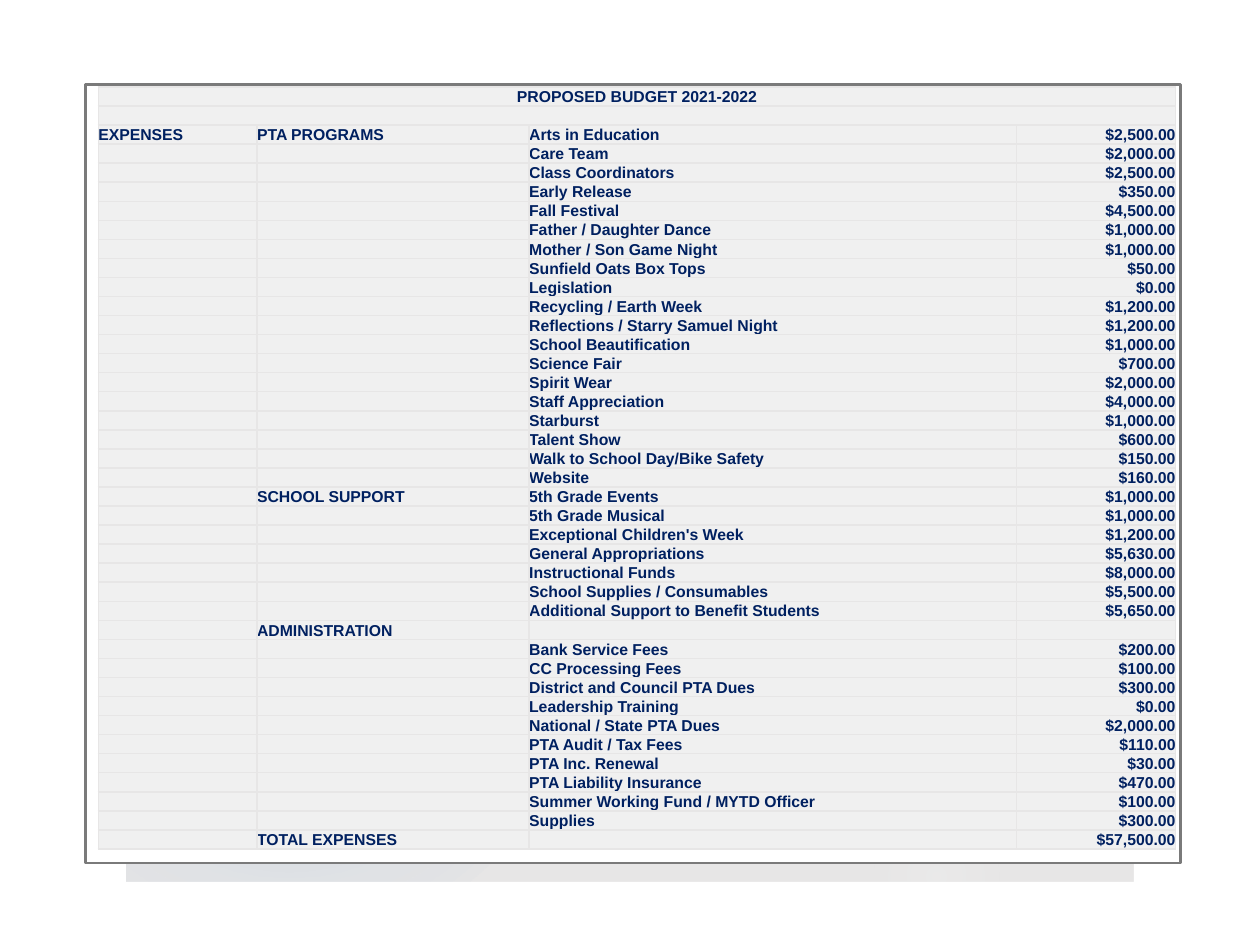
from pptx import Presentation
from pptx import oxml
from pptx import util as u
from pptx.dml.color import RGBColor
from pptx.enum import shapes, text
from pptx.oxml import ns

BACKGROUND = RGBColor(0xE7, 0xE6, 0xE6)
BORDER = BACKGROUND
CELL = RGBColor(0xF0, 0xF0, 0xF0)
NAVY = RGBColor(0x00, 0x20, 0x60)
BLUE = RGBColor(0x5B, 0x9B, 0xD5)
WHITE = RGBColor(0xFF, 0xFF, 0xFF)
GRAY = RGBColor(0x7A, 0x7A, 0x7A)

# left, top, diameter, colour, then (position, opacity) stops in percent
GLOWS = [
    (6.89, 1.83, 3.08, BLUE, [(0, 7), (36, 6), (69, 0)]),
    (0, 2.92, 4.58, BLUE, [(0, 11), (36, 10), (75, 0)]),
    (6.22, 0, 1.75, WHITE, [(0, 14), (36, 7), (73, 0)]),
    (6.89, 6.42, 1.08, WHITE, [(0, 14), (36, 7), (66, 0)]),
    (0, 3.17, 2.58, BLUE, [(0, 8), (36, 8), (72, 0)]),
]

COLUMN_WIDTHS = [1.26, 2.16, 3.87, 1.26]
TITLE = "PROPOSED BUDGET 2021-2022"
PROGRAMS = [
    ("Arts in Education", "$2,500.00"),
    ("Care Team", "$2,000.00"),
    ("Class Coordinators", "$2,500.00"),
    ("Early Release", "$350.00"),
    ("Fall Festival", "$4,500.00"),
    ("Father / Daughter Dance", "$1,000.00"),
    ("Mother / Son Game Night", "$1,000.00"),
    ("Sunfield Oats Box Tops", "$50.00"),
    ("Legislation", "$0.00"),
    ("Recycling / Earth Week", "$1,200.00"),
    ("Reflections / Starry Samuel Night", "$1,200.00"),
    ("School Beautification", "$1,000.00"),
    ("Science Fair", "$700.00"),
    ("Spirit Wear", "$2,000.00"),
    ("Staff Appreciation", "$4,000.00"),
    ("Starburst", "$1,000.00"),
    ("Talent Show", "$600.00"),
    ("Walk to School Day/Bike Safety", "$150.00"),
    ("Website", "$160.00"),
]
SUPPORT = [
    ("5th Grade Events", "$1,000.00"),
    ("5th Grade Musical", "$1,000.00"),
    ("Exceptional Children's Week", "$1,200.00"),
    ("General Appropriations", "$5,630.00"),
    ("Instructional Funds", "$8,000.00"),
    ("School Supplies / Consumables", "$5,500.00"),
    ("Additional Support to Benefit Students", "$5,650.00"),
]
ADMINISTRATION = [
    ("", ""),
    ("Bank Service Fees", "$200.00"),
    ("CC Processing Fees", "$100.00"),
    ("District and Council PTA Dues", "$300.00"),
    ("Leadership Training", "$0.00"),
    ("National / State PTA Dues", "$2,000.00"),
    ("PTA Audit / Tax Fees", "$110.00"),
    ("PTA Inc. Renewal", "$30.00"),
    ("PTA Liability Insurance", "$470.00"),
    ("Summer Working Fund / MYTD Officer", "$100.00"),
    ("Supplies", "$300.00"),
]
SECTIONS = [
    ("PTA PROGRAMS", PROGRAMS),
    ("SCHOOL SUPPORT", SUPPORT),
    ("ADMINISTRATION", ADMINISTRATION),
    ("TOTAL EXPENSES", [("", "$57,500.00")]),
]


def budget_rows():
    rows = [[TITLE, "", "", ""], [""] * 4]
    for section, items in SECTIONS:
        for index, (item, amount) in enumerate(items):
            rows.append(["", section if index == 0 else "", item, amount])
    rows[2][0] = "EXPENSES"
    return rows


def add_glow(slide, left, top, diameter, color, stops):
    """Add a circle whose colour fades out from its centre."""
    size = u.Inches(diameter)
    glow = slide.shapes.add_shape(
        shapes.MSO_SHAPE.OVAL, u.Inches(left), u.Inches(top), size, size)
    glow.shadow.inherit = False
    glow.line.fill.background()
    stop_xml = "".join(
        f'<a:gs pos="{position * 1000}"><a:srgbClr val="{color}">'
        f'<a:alpha val="{opacity * 1000}"/></a:srgbClr></a:gs>'
        for position, opacity in stops)
    gradient = oxml.parse_xml(
        f'<a:gradFill {ns.nsdecls("a")}><a:gsLst>{stop_xml}</a:gsLst>'
        '<a:path path="circle"><a:fillToRect l="50000" t="50000" r="50000" b="50000"/>'
        '</a:path></a:gradFill>')
    glow._element.spPr.find(ns.qn("a:prstGeom")).addnext(gradient)


def add_margin_frame(slide, width, height):
    """Cover the slide edges in white, leaving a window in the middle."""
    left, top, right, bottom = 0.56, 0.56, 9.45, 6.95
    builder = slide.shapes.build_freeform(0, 0, scale=u.Inches(1))
    builder.add_line_segments([(0, height), (width, height), (width, 0)])
    builder.move_to(right, bottom)
    builder.add_line_segments([(left, bottom), (left, top), (right, top)])
    frame = builder.convert_to_shape()
    frame.shadow.inherit = False
    frame.fill.solid()
    frame.fill.fore_color.rgb = WHITE
    frame.line.fill.background()


def add_panel(slide, left, top, width, height):
    panel = slide.shapes.add_shape(
        shapes.MSO_SHAPE.RECTANGLE, *map(u.Inches, (left, top, width, height)))
    panel.shadow.inherit = False
    panel.fill.solid()
    panel.fill.fore_color.rgb = WHITE
    panel.line.color.rgb = GRAY
    panel.line.width = u.Pt(1.5)


def format_cell(cell, content, alignment):
    properties = cell._tc.get_or_add_tcPr()
    for side in "LRTB":
        properties.append(oxml.parse_xml(
            f'<a:ln{side} {ns.nsdecls("a")} w="{u.Pt(1)}"><a:solidFill>'
            f'<a:srgbClr val="{BORDER}"/></a:solidFill></a:ln{side}>'))
    cell.fill.solid()
    cell.fill.fore_color.rgb = CELL
    cell.margin_left = cell.margin_right = cell.margin_top = cell.margin_bottom = 0
    cell.vertical_anchor = text.MSO_ANCHOR.BOTTOM
    cell.text = content
    paragraph = cell.text_frame.paragraphs[0]
    paragraph.alignment = alignment
    font = paragraph.font
    font.name, font.size, font.bold = "Arial", u.Pt(9), True
    font.color.rgb = NAVY
    if not content:  # an empty paragraph takes its height from its end mark
        paragraph._p.get_or_add_endParaRPr().set("sz", "900")


def add_budget_table(slide, left, top, height):
    rows = budget_rows()
    width = sum(COLUMN_WIDTHS)
    table = slide.shapes.add_table(
        len(rows), len(COLUMN_WIDTHS),
        *map(u.Inches, (left, top, width, height))).table
    table.first_row = table.horz_banding = False
    for column, column_width in zip(table.columns, COLUMN_WIDTHS):
        column.width = u.Inches(column_width)
    for row_index, row in enumerate(rows):
        table.rows[row_index].height = u.Inches(height / len(rows))
        for column_index, content in enumerate(row):
            if row_index == 0:
                alignment = text.PP_ALIGN.CENTER
            elif column_index == 3:
                alignment = text.PP_ALIGN.RIGHT
            else:
                alignment = text.PP_ALIGN.LEFT
            format_cell(table.cell(row_index, column_index), content, alignment)
    for row_index in range(2):
        table.cell(row_index, 0).merge(table.cell(row_index, 3))


def main():
    presentation = Presentation()
    presentation.slide_width = u.Inches(10)
    presentation.slide_height = u.Inches(7.5)
    slide = presentation.slides.add_slide(presentation.slide_layouts[6])
    slide.background.fill.solid()
    slide.background.fill.fore_color.rgb = BACKGROUND
    for glow in GLOWS:
        add_glow(slide, *glow)
    add_margin_frame(slide, 10, 7.5)
    add_panel(slide, 0.68, 0.67, 8.69, 6.18)
    add_budget_table(slide, 0.78, 0.69, 6.06)
    presentation.save("out.pptx")


if __name__ == "__main__":
    main()
